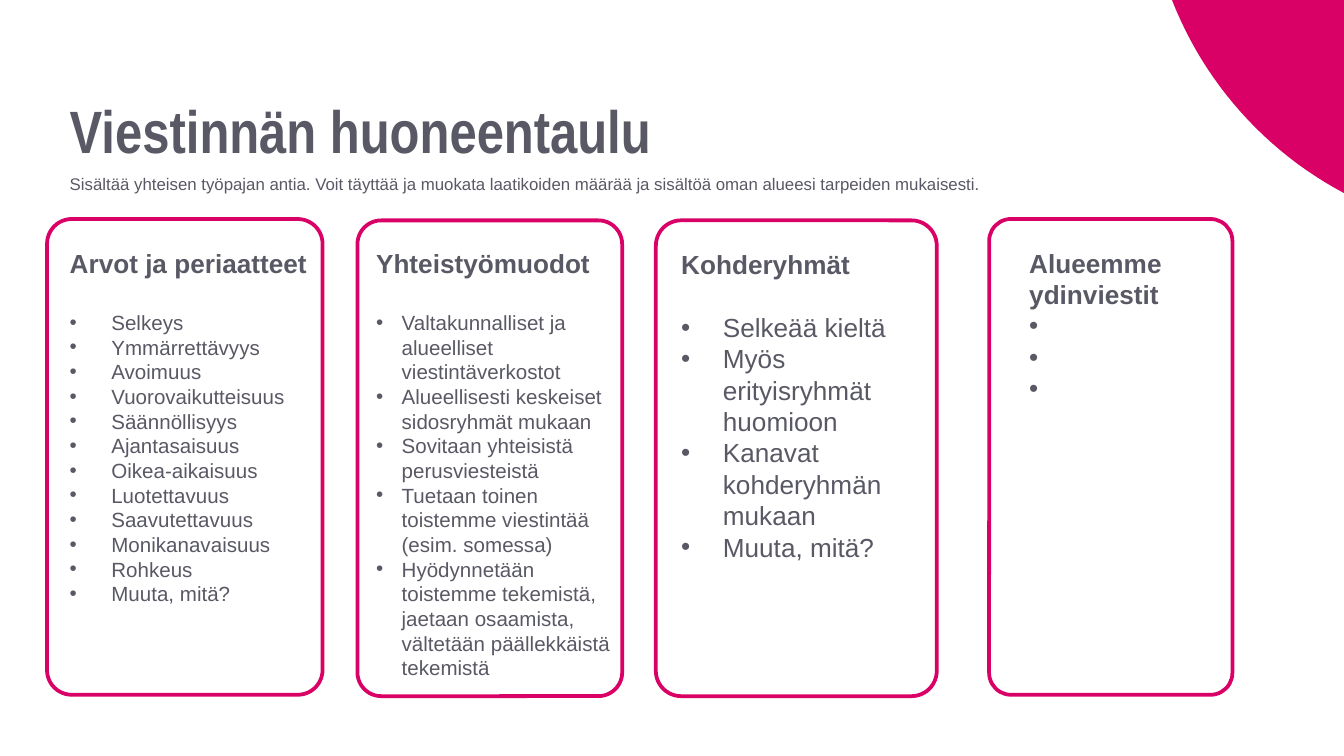
from math import atan2, cos, hypot, sin

from lxml.etree import SubElement
from pptx import Presentation
from pptx.dml.color import RGBColor
from pptx.enum.shapes import MSO_SHAPE
from pptx.enum.text import MSO_ANCHOR
from pptx.oxml.ns import qn
from pptx.util import Inches, Pt

PINK = RGBColor(0xD9, 0x00, 0x66)
GREY = RGBColor(0x59, 0x59, 0x65)

TITLE = "Viestinnän huoneentaulu"
SUBTITLE = ("Sisältää yhteisen työpajan antia. Voit täyttää ja muokata laatikoiden "
            "määrää ja sisältöä oman alueesi tarpeiden mukaisesti.")

# frame and text: left, top, width, height in inches; sizes and gaps in points
CARDS = [
    {"heading": "Arvot ja periaatteet",
     "items": ["Selkeys", "Ymmärrettävyys", "Avoimuus", "Vuorovaikutteisuus",
               "Säännöllisyys", "Ajantasaisuus", "Oikea-aikaisuus", "Luotettavuus",
               "Saavutettavuus", "Monikanavaisuus", "Rohkeus", "Muuta, mitä?"],
     "frame": (0.35, 1.63, 2.05, 3.54), "text": (0.42, 1.79, 2.02, 3.57),
     "size": 11, "indent": 0.31, "gap": 16.8},
    {"heading": "Yhteistyömuodot",
     "items": ["Valtakunnalliset ja alueelliset viestintäverkostot",
               "Alueellisesti keskeiset sidosryhmät mukaan",
               "Sovitaan yhteisistä perusviesteistä",
               "Tuetaan toinen toistemme viestintää (esim. somessa)",
               "Hyödynnetään toistemme tekemistä, jaetaan osaamista, "
               "vältetään päällekkäistä tekemistä"],
     "frame": (2.66, 1.64, 1.97, 3.54), "text": (2.7, 1.79, 2.01, 3.35),
     "size": 11, "indent": 0.19, "gap": 16.8},
    {"heading": "Kohderyhmät",
     "items": ["Selkeää kieltä", "Myös erityisryhmät huomioon",
               "Kanavat kohderyhmän mukaan", "Muuta, mitä?"],
     "frame": (4.88, 1.64, 2.09, 3.54), "text": (4.97, 1.8, 1.91, 2.69),
     "size": 14, "indent": 0.31, "gap": 16.8},
    {"heading": "Alueemme ydinviestit",
     "items": [" "] * 3,
     "frame": (7.36, 1.63, 1.81, 3.54), "text": (7.56, 1.79, 1.73, 1.28),
     "size": 14, "indent": 0.31, "gap": 0},
]


def style(font, size, bold=False, name="Arial"):
    for key, value in {"size": Pt(size), "bold": bold, "name": name}.items():
        setattr(font, key, value)
    font.color.rgb = GREY


def add_text_frame(page, area):
    frame = page.shapes.add_textbox(*map(Inches, area)).text_frame
    frame.word_wrap = True
    return frame


def add_span(para, text, size, **look):
    span = para.add_run()
    span.text = text
    style(span.font, size, **look)


def add_corner(page):
    """Fill the top right corner, cut off by an arc of a large circle."""
    center_x, center_y, steps = 11.3, -1.01, 24
    radius = hypot(8.72 - center_x, center_y)
    start = atan2(-center_y, 8.72 - center_x)
    end = atan2(1.44 - center_y, 10 - center_x)
    angles = [start + (end - start) * step / steps for step in range(steps + 1)]
    arc = [(center_x + radius * cos(angle), center_y + radius * sin(angle))
           for angle in angles]
    points = [(Inches(x), Inches(y)) for x, y in arc + [(10, 0)]]
    builder = page.shapes.build_freeform(*points[0])
    builder.add_line_segments(points[1:], close=True)
    corner = builder.convert_to_shape()
    corner.shadow.inherit = False
    corner.fill.solid()
    corner.fill.fore_color.rgb = PINK
    corner.line.fill.background()


def add_card(page, card):
    box = page.shapes.add_shape(MSO_SHAPE.ROUNDED_RECTANGLE,
                                *map(Inches, card["frame"]))
    box.adjustments[0] = 0.09
    box.shadow.inherit = False
    box.fill.background()
    box.line.color.rgb = PINK
    box.line.width = Pt(2)

    frame = add_text_frame(page, card["text"])
    heading = frame.paragraphs[0]
    add_span(heading, card["heading"], 14, bold=True)
    heading.space_after = Pt(card["gap"])
    for item in card["items"]:
        para = frame.add_paragraph()
        properties = para._p.get_or_add_pPr()
        properties.set("marL", str(Inches(card["indent"])))
        properties.set("indent", str(-Inches(card["indent"])))
        SubElement(properties, qn("a:buFont"), typeface="Arial")
        SubElement(properties, qn("a:buChar"), char="•")
        add_span(para, item, card["size"])


def main():
    deck = Presentation()
    deck.slide_width = Inches(10)
    deck.slide_height = deck.slide_width * 9 // 16
    page = deck.slides.add_slide(deck.slide_layouts[6])
    add_corner(page)
    title = add_text_frame(page, (0.42, 0.21, 8.23, 1.07))
    title.vertical_anchor = MSO_ANCHOR.BOTTOM
    add_span(title.paragraphs[0], TITLE, 32, bold=True, name="Arial Narrow")
    subtitle = add_text_frame(page, (0.42, 1.24, 8.29, 0.25))
    add_span(subtitle.paragraphs[0], SUBTITLE, 9)
    for card in CARDS:
        add_card(page, card)
    deck.save("out.pptx")


if __name__ == "__main__":
    main()
